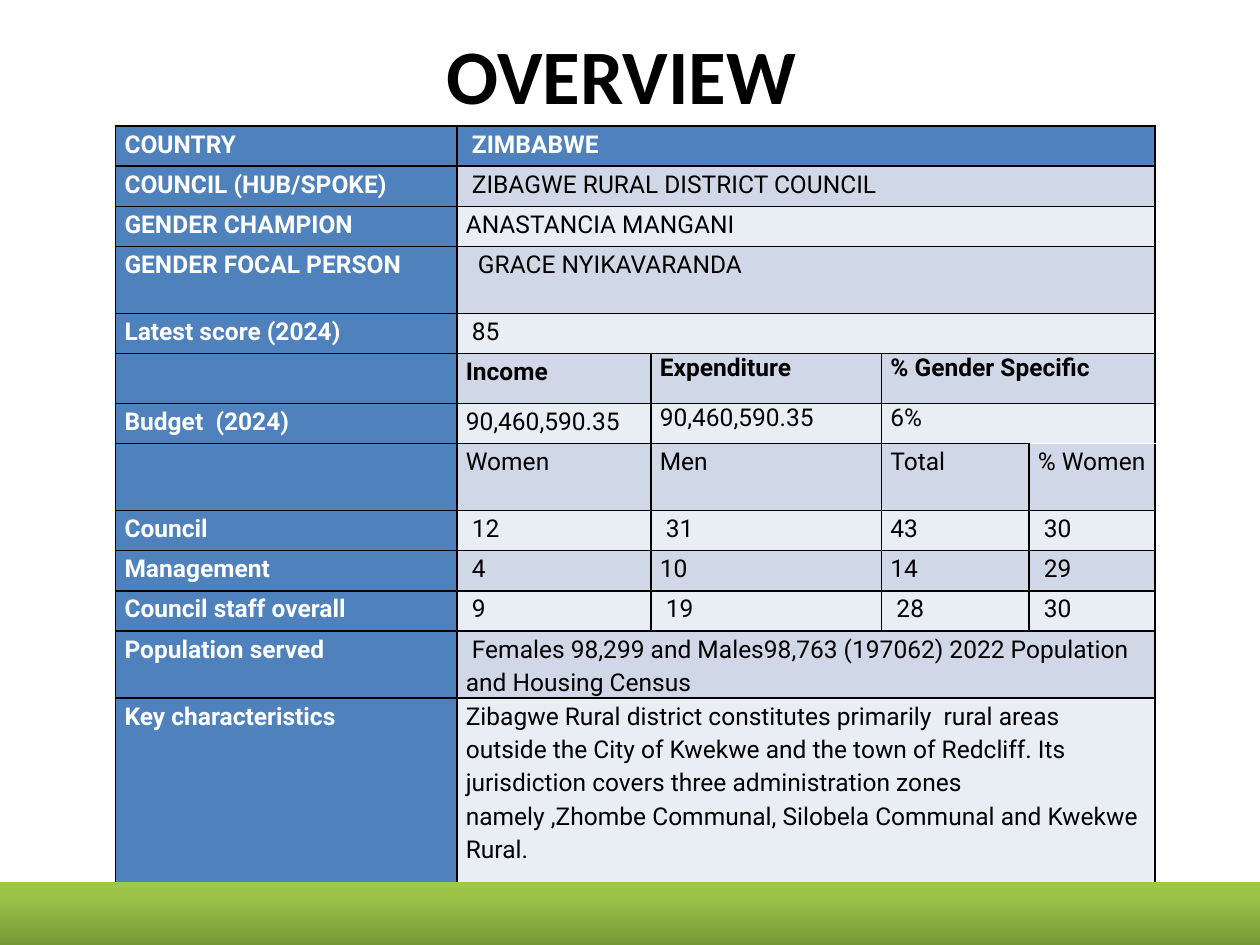
from dataclasses import dataclass
from copy import deepcopy

from lxml import etree
from pptx import Presentation
from pptx.dml.color import RGBColor
from pptx.enum import shapes, text
from pptx.oxml.ns import qn
from pptx.slide import Slide
from pptx.table import _Cell
from pptx.util import Cm, Pt


@dataclass(frozen=True)
class Theme:
    title_font: str = "Calibri"
    table_font: str = "Roboto"
    title_size: int = 44
    table_size: int = 14
    black: str = "000000"
    white: str = "FFFFFF"
    label_fill: str = "4F81BD"
    odd_fill: str = "D0D8E8"
    even_fill: str = "E9EDF4"
    band_stops: tuple[tuple[float, str], ...] = (
        (0, "779737"), (0.8, "9BC348"), (1, "9DC746"))


@dataclass(frozen=True)
class Row:
    label: str
    values: tuple[str, ...]
    height: float = 0.81
    heading: bool = False
    budget: bool = False


THEME = Theme()
COLUMN_WIDTHS = (6.88, 3.91, 4.65, 2.97, 2.54)
BORDER_SIDES = ("L", "R", "T", "B")
ROWS = (
    Row("COUNTRY", (" ZIMBABWE",), heading=True),
    Row("COUNCIL (HUB/SPOKE)", (" ZIBAGWE RURAL DISTRICT COUNCIL",)),
    Row("GENDER CHAMPION", ("ANASTANCIA MANGANI",)),
    Row("GENDER FOCAL PERSON", ("  GRACE NYIKAVARANDA",), height=1.35),
    Row("Latest score (2024)", (" 85",)),
    Row("", ("Income", "Expenditure", "% Gender Specific"), height=1,
        heading=True, budget=True),
    Row("Budget  (2024)", ("90,460,590.35", "90,460,590.35", "6%"), budget=True),
    Row("", ("Women", "Men", "Total", "% Women"), height=1.35),
    Row("Council", (" 12", " 31", "43", " 30")),
    Row("Management", (" 4", "10", "14", " 29")),
    Row("Council staff overall", (" 9", " 19", " 28", " 30")),
    Row("Population served",
        (" Females 98,299 and Males98,763 (197062) 2022 Population and Housing Census",),
        height=1.35),
    Row("Key characteristics",
        ("Zibagwe Rural district constitutes primarily  rural areas outside the City of "
         "Kwekwe and the town of Redcliff. Its jurisdiction covers three administration "
         "zones namely ,Zhombe Communal, Silobela Communal and Kwekwe Rural.",),
        height=3.9),
)


def set_border(cell: _Cell, side: str, color: str) -> None:
    line = etree.SubElement(cell._tc.get_or_add_tcPr(), qn(f"a:ln{side}"), w=str(Pt(1)))
    fill = etree.SubElement(line, qn("a:solidFill"))
    etree.SubElement(fill, qn("a:srgbClr"), val=color)


def format_cell(cell: _Cell, fill: str, white_side: str = "") -> None:
    for side in BORDER_SIDES:
        set_border(cell, side, THEME.white if side == white_side else THEME.black)
    cell.fill.solid()
    cell.fill.fore_color.rgb = RGBColor.from_string(fill)
    cell.margin_left = cell.margin_right = Cm(0.18)
    cell.margin_top = cell.margin_bottom = 0


def write_cell(cell: _Cell, content: str, color: str, bold: bool, spacing: float) -> None:
    cell.text = content
    paragraph = cell.text_frame.paragraphs[0]
    paragraph.line_spacing = spacing
    paragraph.font.name = THEME.table_font
    paragraph.font.size = Pt(THEME.table_size)
    paragraph.font.bold = bold
    paragraph.font.color.rgb = RGBColor.from_string(color)


def add_title(slide: Slide, content: str) -> None:
    title = slide.shapes.title
    title.left, title.top, title.width, title.height = Cm(1.27), Cm(0.43), Cm(22.86), Cm(2.11)
    title.text = content
    title.text_frame.vertical_anchor = text.MSO_ANCHOR.MIDDLE
    paragraph = title.text_frame.paragraphs[0]
    paragraph.alignment = text.PP_ALIGN.CENTER
    paragraph.font.name = THEME.title_font
    paragraph.font.size = Pt(THEME.title_size)
    paragraph.font.bold = True
    paragraph.font.color.rgb = RGBColor.from_string(THEME.black)


def add_overview_table(slide: Slide, rows: tuple[Row, ...]) -> None:
    last_column = len(COLUMN_WIDTHS) - 1
    table = slide.shapes.add_table(
        len(rows), len(COLUMN_WIDTHS), Cm(2.33), Cm(2.54),
        Cm(sum(COLUMN_WIDTHS)), Cm(sum(row.height for row in rows))).table
    for column, width in zip(table.columns, COLUMN_WIDTHS):
        column.width = Cm(width)
    white_edges = {(6, last_column): "B", (7, last_column): "T"}
    for index, row in enumerate(rows):
        table.rows[index].height = Cm(row.height)
        band_fill = THEME.odd_fill if index % 2 else THEME.even_fill
        for column in range(last_column + 1):
            blue = column == 0 or index == 0
            format_cell(table.cell(index, column), THEME.label_fill if blue else band_fill,
                        white_edges.get((index, column), ""))
        for column, content in enumerate((row.label, *row.values)):
            blue = column == 0 or index == 0
            write_cell(table.cell(index, column), content,
                       THEME.white if blue else THEME.black,
                       blue or row.heading, 1 if row.budget and column > 1 else 1.15)
        if len(row.values) < last_column:
            table.cell(index, len(row.values)).merge(table.cell(index, last_column))


def add_footer_band(slide: Slide) -> None:
    band = slide.shapes.add_shape(
        shapes.MSO_SHAPE.RECTANGLE, 0, Cm(17.78), Cm(25.93), Cm(1.3))
    band.shadow.inherit = False
    band.line.fill.background()
    band.fill.gradient()
    band.fill.gradient_angle = 90
    stop_list = band._element.spPr.find(qn("a:gradFill")).find(qn("a:gsLst"))
    stop_list.append(deepcopy(stop_list[-1]))
    for stop, (position, color) in zip(band.fill.gradient_stops, THEME.band_stops):
        stop.position = position
        stop.color.rgb = RGBColor.from_string(color)


def main() -> None:
    presentation = Presentation()
    presentation.slide_width, presentation.slide_height = Cm(25.4), Cm(19.05)
    slide = presentation.slides.add_slide(presentation.slide_layouts[5])
    add_title(slide, "OVERVIEW ")
    add_overview_table(slide, ROWS)
    add_footer_band(slide)
    presentation.save("out.pptx")


if __name__ == "__main__":
    main()
